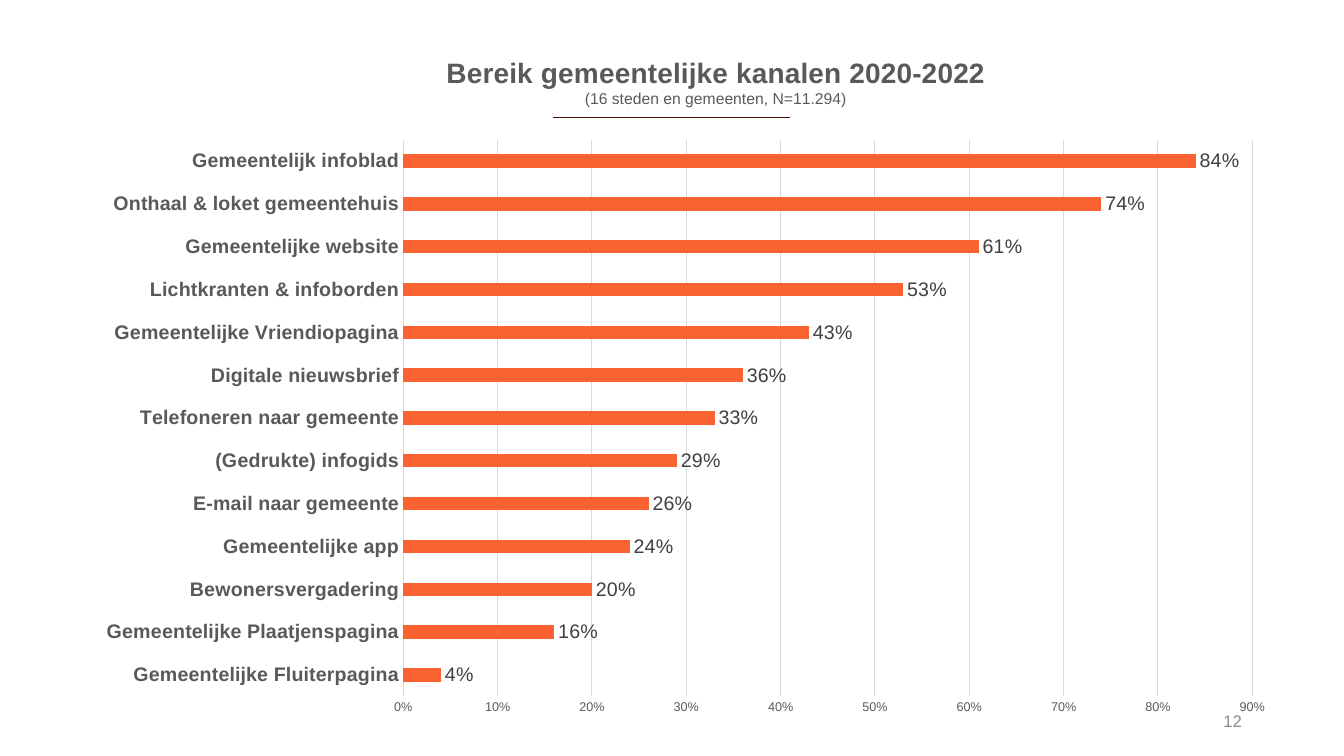
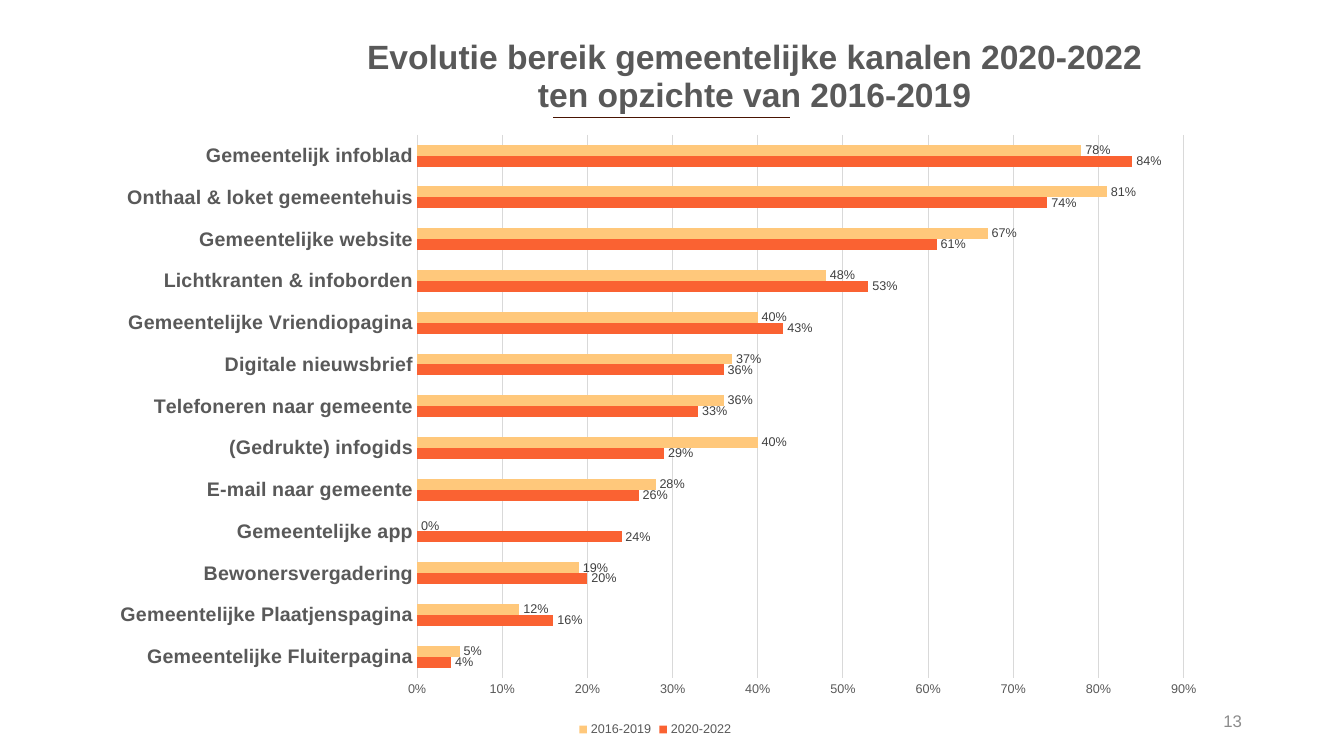
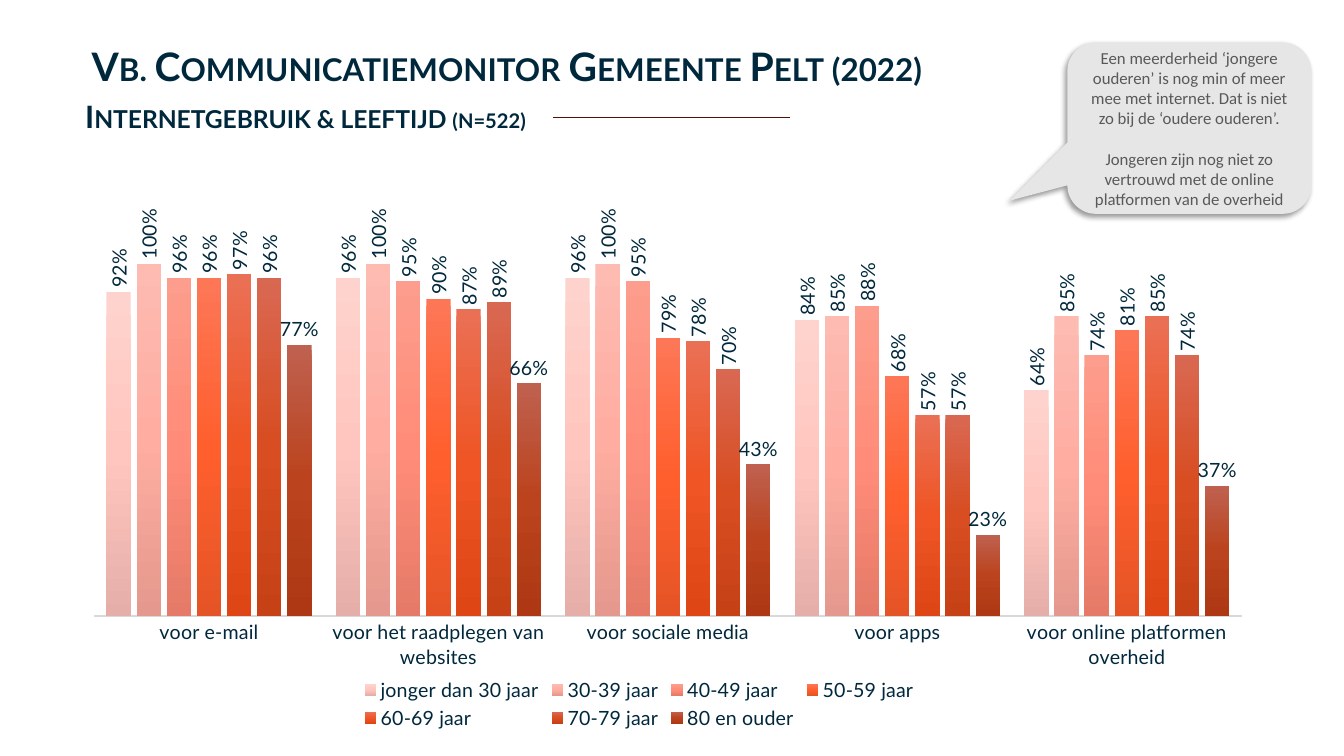
import pptx
import pptx.chart.data
import pptx.dml.color
import pptx.enum.chart
import pptx.enum.shapes
import pptx.enum.text
import pptx.oxml
import pptx.oxml.ns
import pptx.util

Cm, Pt = pptx.util.Cm, pptx.util.Pt
RGB = pptx.dml.color.RGBColor.from_string
qn = pptx.oxml.ns.qn
NS = pptx.oxml.ns.nsdecls("a", "c")
XL = pptx.enum.chart
PP_ALIGN = pptx.enum.text.PP_ALIGN
ANCHOR = pptx.enum.text.MSO_ANCHOR

COLORS = {
    "rule": "491402", "number": "8C8C8C", "grey": "595959", "label": "404040",
    "grid": "D9D9D9", "orange": "FA6232", "yellow": "FFC87B", "navy": "00283C",
    "bubble": "E7E6E6",
}


def set_layout(parent, index, x, y, w=None, h=None):
    """Place a chart title or the inner plot area, in fractions of the chart."""
    old = parent.find(qn("c:layout"))
    if old is not None:
        parent.remove(old)
    target = '<c:layoutTarget val="inner"/>' if w else ""
    size = f'<c:w val="{w}"/><c:h val="{h}"/>' if w else ""
    parent.insert(index, pptx.oxml.parse_xml(
        f'<c:layout {NS}><c:manualLayout>{target}<c:xMode val="edge"/><c:yMode val="edge"/>'
        f'<c:x val="{x}"/><c:y val="{y}"/>{size}</c:manualLayout></c:layout>'))


def add_chart(s, kind, box, cats, series, plot_box, gap, fmt, font, color, label_color, label_size):
    data = pptx.chart.data.CategoryChartData(number_format=fmt)
    data.categories = cats
    for name, vals in series:
        data.add_series(name, vals)
    chart = s.shapes.add_chart(kind, *[Cm(v) for v in box], data).chart
    chart.has_title = False
    chart.font.name, chart.font.size = font, Pt(label_size)
    chart.font.color.rgb = RGB(color)
    set_layout(chart.element.find(".//" + qn("c:plotArea")), 0, *plot_box)
    plot = chart.plots[0]
    plot.gap_width, plot.vary_by_categories = gap, False
    for ser in plot.series:
        dl = ser.data_labels
        dl.show_value = True
        dl.number_format, dl.number_format_is_linked = fmt, False
        dl.position = XL.XL_LABEL_POSITION.OUTSIDE_END
        dl.font.name, dl.font.size = font, Pt(label_size)
        dl.font.color.rgb = RGB(label_color)
    axis = chart.category_axis
    axis.major_tick_mark = XL.XL_TICK_MARK.NONE
    axis.tick_labels.font.size = Pt(14)
    axis.format.line.color.rgb = RGB(COLORS["grid"])
    axis.format.line.width = Pt(0.75)
    chart.value_axis.minimum_scale = 0
    chart.value_axis.major_tick_mark = XL.XL_TICK_MARK.NONE
    chart.has_legend = len(series) > 1
    if chart.has_legend:
        chart.legend.position = XL.XL_LEGEND_POSITION.BOTTOM
        chart.legend.include_in_layout = False
        chart.legend.font.name, chart.legend.font.size = font, Pt(label_size)
        chart.legend.font.color.rgb = RGB(color)
    return chart


prs = pptx.Presentation()
prs.slide_width, prs.slide_height = Cm(33.87), Cm(19.05)
TITLE_ONLY, BLANK = prs.slide_layouts[5], prs.slide_layouts[6]

# Bar charts: reach of the municipal channels
channels = [
    "Gemeentelijke Fluiterpagina", "Gemeentelijke Plaatjenspagina", "Bewonersvergadering",
    "Gemeentelijke app", "E-mail naar gemeente", "(Gedrukte) infogids",
    "Telefoneren naar gemeente", "Digitale nieuwsbrief", "Gemeentelijke Vriendiopagina",
    "Lichtkranten & infoborden", "Gemeentelijke website", "Onthaal & loket gemeentehuis",
    "Gemeentelijk infoblad",
]
recent = [0.04, 0.16, 0.2, 0.24, 0.26, 0.29, 0.33, 0.36, 0.43, 0.53, 0.61, 0.74, 0.84]
earlier = [0.05, 0.12, 0.19, 0, 0.28, 0.4, 0.36, 0.37, 0.4, 0.48, 0.67, 0.81, 0.78]

bar_slides = [
    dict(number="12", box=(1.9, 1.22, 30.61, 17.17), plot_box=(0.27, 0.134, 0.699, 0.817),
         title=[("Bereik gemeentelijke kanalen 2020-2022", 20, True),
                ("(16 steden en gemeenten, N=11.294)", 11.2, False)],
         title_at=(0.303, 0.007), gap=219, label_size=14, series=[("Series 1", recent)]),
    dict(number="13", box=(2.29, 0.38, 28.45, 18.29), plot_box=(0.289, 0.165, 0.679, 0.748),
         title=[("Evolutie bereik gemeentelijke kanalen 2020-2022", 24, True),
                ("ten opzichte van 2016-2019", 24, True)],
         title_at=(0.242, 0.026), gap=182, label_size=9,
         series=[("2020-2022", recent), ("2016-2019", earlier)]),
]
for bar in bar_slides:
    s = prs.slides.add_slide(BLANK)

    # Page number
    sp = s.shapes.add_textbox(Cm(23.93), Cm(17.65), Cm(7.62), Cm(1.02))
    tf = sp.text_frame
    tf.word_wrap, tf.vertical_anchor = True, ANCHOR.MIDDLE
    p = tf.paragraphs[0]
    p.text, p.alignment = bar["number"], PP_ALIGN.RIGHT
    p.font.name, p.font.size = "Arial", Pt(12)
    p.font.color.rgb = RGB(COLORS["number"])

    # Chart, axes and bar colours
    chart = add_chart(s, XL.XL_CHART_TYPE.BAR_CLUSTERED, bar["box"], channels, bar["series"],
                      bar["plot_box"], bar["gap"], "0%", "Arial", COLORS["grey"],
                      COLORS["label"], bar["label_size"])
    chart.category_axis.tick_labels.font.bold = True
    axis = chart.value_axis
    axis.maximum_scale, axis.major_unit = 0.9, 0.1
    axis.tick_labels.font.size = Pt(9)
    axis.format.line.fill.background()
    axis.major_gridlines.format.line.color.rgb = RGB(COLORS["grid"])
    axis.major_gridlines.format.line.width = Pt(0.75)
    for ser, color in zip(chart.plots[0].series, ("orange", "yellow")):
        ser.format.fill.solid()
        ser.format.fill.fore_color.rgb = RGB(COLORS[color])

    # Chart title
    tf = chart.chart_title.text_frame
    for i, (text, size, bold) in enumerate(bar["title"]):
        p = tf.add_paragraph() if i else tf.paragraphs[0]
        r = p.add_run()
        r.text = text
        r.font.name, r.font.size, r.font.bold = "Arial", Pt(size), bold
        r.font.color.rgb = RGB(COLORS["grey"])
    set_layout(chart.element.find(".//" + qn("c:title")), 1, *bar["title_at"])

# Column chart: internet use by age
s = prs.slides.add_slide(TITLE_ONLY)
subtitle = s.shapes.add_textbox(Cm(0.08), Cm(2.34), Cm(15.24), Cm(1.19))
sp = s.shapes.title
sp.left, sp.top, sp.width, sp.height = Cm(0.61), Cm(1.07), Cm(24.33), Cm(2.06)
headings = [
    (sp, [("Vb. Communicatiemonitor Gemeente Pelt (2022)", 28)], 0.9),
    (subtitle, [("Internetgebruik & leeftijd ", 22), ("(n=522)", 18)], 1),
]
for sp, runs, spacing in headings:
    tf = sp.text_frame
    tf.word_wrap, tf.vertical_anchor = True, ANCHOR.TOP
    p = tf.paragraphs[0]
    p.alignment, p.line_spacing = PP_ALIGN.CENTER, spacing
    for text, size in runs:
        r = p.add_run()
        r.text = text
        r.font.name, r.font.size, r.font.bold = "Lato", Pt(size), True
        r.font.color.rgb = RGB(COLORS["navy"])
        r.font._element.set("cap", "small")

uses = ["voor e-mail", "voor het raadplegen van websites", "voor sociale media",
        "voor apps", "voor online platformen overheid"]
ages = [
    ("jonger dan 30 jaar", [0.92, 0.96, 0.96, 0.84, 0.64], ("FED3CD", "FFC6BF", "E5AEA8")),
    ("30-39 jaar", [1, 1, 1, 0.85, 0.85], ("FDBBB2", "FFADA1", "E5988D")),
    ("40-49 jaar", [0.96, 0.95, 0.95, 0.88, 0.74], ("FD9D8D", "FF8C78", "E57A68")),
    ("50-59 jaar", [0.96, 0.9, 0.79, 0.68, 0.81], ("FD7757", "FF5F2D", "E55426")),
    ("60-69 jaar", [0.97, 0.87, 0.78, 0.57, 0.85], ("EA7055", "EF5525", "DE4616")),
    ("70-79 jaar", [0.96, 0.89, 0.7, 0.57, 0.74], ("D96852", "D84D21", "C74116")),
    ("80 en ouder", [0.77, 0.66, 0.43, 0.23, 0.37], ("BF6150", "BB431D", "AD3813")),
]
chart = add_chart(s, XL.XL_CHART_TYPE.COLUMN_CLUSTERED, (0.61, 5.16, 30.99, 13.34), uses,
                  [age[:2] for age in ages], (0.057, 0.111, 0.933, 0.666), 100, "###0%",
                  "Lato", COLORS["navy"], COLORS["navy"], 14)
chart.plots[0].overlap = -24
chart.category_axis.format.line.width = Pt(1)
axis = chart.value_axis
axis.maximum_scale, axis.major_unit = 1, 0.2
axis.has_major_gridlines = axis.visible = False
for ser, (name, vals, stops) in zip(chart.plots[0].series, ages):
    ser.format.fill.gradient()
    ser.format.fill.gradient_angle = 270
    gradient = ser._element.find(".//" + qn("a:gsLst"))
    gradient.clear()
    for i, color in enumerate(stops):
        gradient.append(pptx.oxml.parse_xml(
            f'<a:gs {NS} pos="{i * 50000}"><a:srgbClr val="{color}"/></a:gs>'))
    if name != "80 en ouder":
        body = ser._element.find(qn("c:dLbls")).find(".//" + qn("a:bodyPr"))
        body.set("rot", "-5400000")
        body.set("vert", "horz")

# Speech bubble
sp = s.shapes.add_shape(pptx.enum.shapes.MSO_SHAPE.ROUNDED_RECTANGULAR_CALLOUT,
                        Cm(26.9), Cm(1.07), Cm(6.15), Cm(4.32))
for i, value in enumerate((-0.737, 0.423, 0.167)):
    sp.adjustments[i] = value
sp.fill.solid()
sp.fill.fore_color.rgb = RGB(COLORS["bubble"])
sp.line.fill.background()
sp.shadow.inherit = False
sp.element.spPr.find(qn("a:effectLst")).append(pptx.oxml.parse_xml(
    f'<a:outerShdw {NS} blurRad="50800" dist="38100" dir="8100000" algn="tr" rotWithShape="0">'
    '<a:srgbClr val="000000"><a:alpha val="40000"/></a:srgbClr></a:outerShdw>'))
tf = sp.text_frame
tf.word_wrap, tf.vertical_anchor = True, ANCHOR.MIDDLE
remarks = [
    "Een meerderheid ‘jongere ouderen’ is nog min of meer mee met internet. "
    "Dat is niet zo bij de ‘oudere ouderen’.",
    "Jongeren zijn nog niet zo vertrouwd met de online platformen van de overheid",
]
for i, text in enumerate(remarks):
    p = tf.add_paragraph() if i else tf.paragraphs[0]
    p.text, p.alignment = text, PP_ALIGN.CENTER
    p.font.name, p.font.size = "Calibri", Pt(12)
    p.font.color.rgb = RGB(COLORS["grey"])
    if i:
        p.space_before = Pt(14.5)

# Rule under the titles, moved to the master so that every slide shows it
rule = s.shapes.add_connector(pptx.enum.shapes.MSO_CONNECTOR.STRAIGHT,
                              Cm(13.94), Cm(2.95), Cm(19.91), Cm(2.95))
rule.line.color.rgb = RGB(COLORS["rule"])
rule.line.width = Pt(0.5)
rule.element.spPr.append(pptx.oxml.parse_xml(f"<a:effectLst {NS}/>"))
rule.element.nvCxnSpPr.cNvPr.set("id", "99")
prs.slide_master.element.cSld.spTree.append(rule.element)

prs.save("out.pptx")
